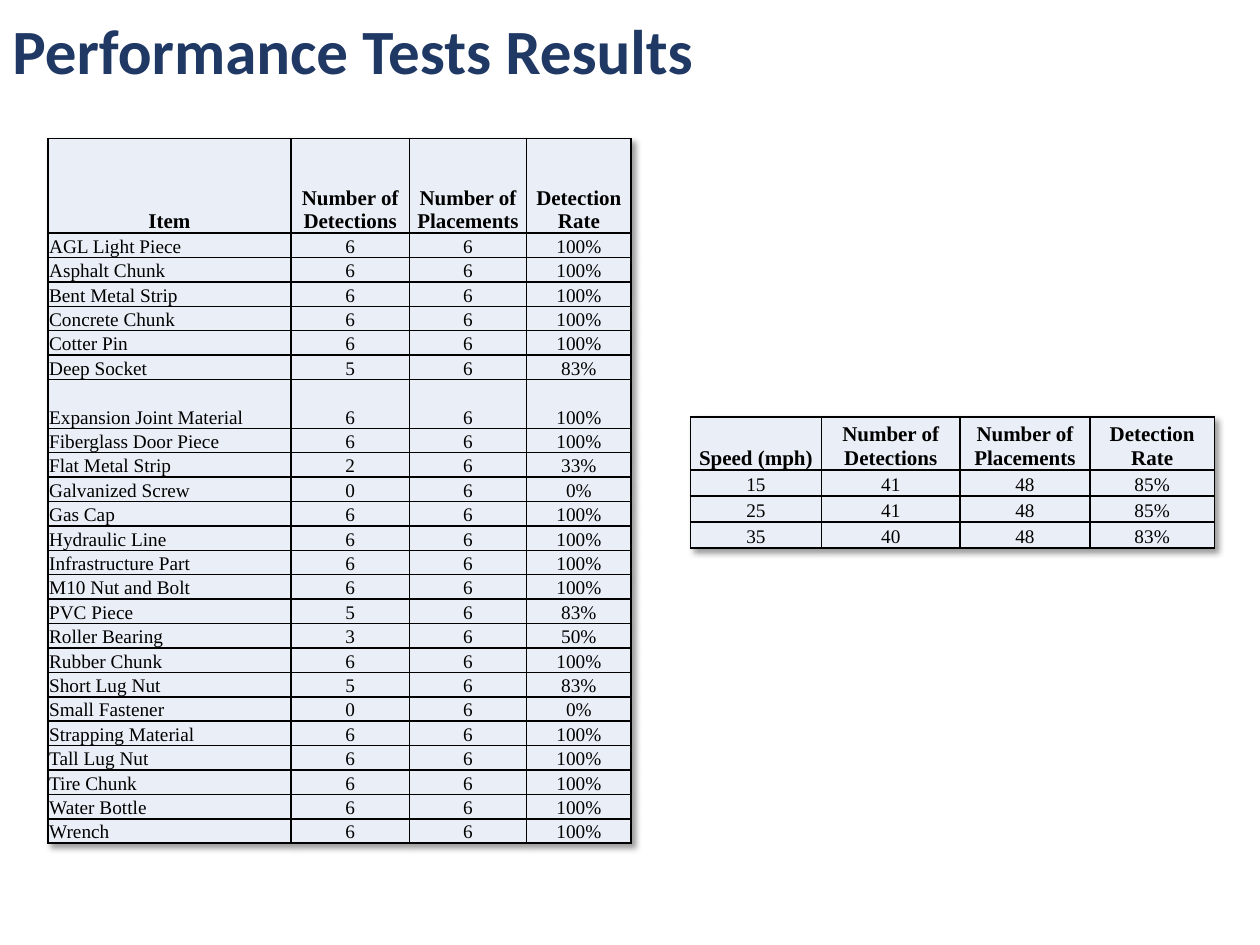
import dataclasses
import typing

import lxml.etree
import pptx
import pptx.dml.color
import pptx.enum.text
import pptx.oxml
import pptx.oxml.ns
import pptx.util

Inches = pptx.util.Inches
Align = pptx.enum.text.PP_ALIGN
Anchor = pptx.enum.text.MSO_ANCHOR


@dataclasses.dataclass(frozen=True)
class Theme:
    title_font: str = "Calibri"
    table_font: str = "Times New Roman"
    title_color: str = "203864"
    ink: str = "000000"
    cell_fill: str = "EAEFF7"
    title_size: int = 36
    header_size: int = 12
    body_size: int = 11
    border_width: int = 1


class Result(typing.NamedTuple):
    label: str
    detections: int
    placements: int
    height_units: int = 1

    def texts(self) -> list[str]:
        rate = f"{self.detections / self.placements:.0%}"
        return [self.label, str(self.detections), str(self.placements), rate]


@dataclasses.dataclass(frozen=True)
class ResultTable:
    label_heading: str
    left: float
    top: float
    height: float
    header_height: float
    column_widths: tuple[float, ...]
    label_align: Align
    results: list[Result]


THEME = Theme()
VALUE_HEADINGS = ["Number of Detections", "Number of Placements", "Detection Rate"]
ITEM_DETECTIONS = {
    "AGL Light Piece": 6,
    "Asphalt Chunk": 6,
    "Bent Metal Strip": 6,
    "Concrete Chunk": 6,
    "Cotter Pin": 6,
    "Deep Socket": 5,
    "Expansion Joint Material": 6,
    "Fiberglass Door Piece": 6,
    "Flat Metal Strip": 2,
    "Galvanized Screw": 0,
    "Gas Cap": 6,
    "Hydraulic Line": 6,
    "Infrastructure Part": 6,
    "M10 Nut and Bolt": 6,
    "PVC Piece": 5,
    "Roller Bearing": 3,
    "Rubber Chunk": 6,
    "Short Lug Nut": 5,
    "Small Fastener": 0,
    "Strapping Material": 6,
    "Tall Lug Nut": 6,
    "Tire Chunk": 6,
    "Water Bottle": 6,
    "Wrench": 6,
}
SPEED_DETECTIONS = {"15": 41, "25": 41, "35": 40}
DOUBLE_HEIGHT_ITEM = "Expansion Joint Material"

TABLES = [
    ResultTable(
        "Item", 0.38, 1.1, 5.59, 0.75, (1.93, 0.94, 0.93, 0.83), Align.LEFT,
        [Result(item, count, 6, 2 if item == DOUBLE_HEIGHT_ITEM else 1)
         for item, count in ITEM_DETECTIONS.items()],
    ),
    ResultTable(
        "Speed (mph)", 5.48, 3.31, 1.04, 0.42, (1.04, 1.1, 1.03, 0.99), Align.CENTER,
        [Result(speed, count, 48) for speed, count in SPEED_DETECTIONS.items()],
    ),
]


def apply_format(target: typing.Any, values: dict[str, typing.Any]) -> None:
    for name, value in values.items():
        setattr(target, name, value)


def write_text(para: typing.Any, text: str, font: str, size: int, color: str, bold: bool) -> None:
    span = para.add_run()
    span.text = text
    apply_format(span.font, {"name": font, "size": pptx.util.Pt(size), "bold": bold})
    span.font.color.rgb = pptx.dml.color.RGBColor.from_string(color)


def add_title(page: typing.Any, text: str) -> None:
    box = page.shapes.add_textbox(0, 0, Inches(7.7), Inches(0.86))
    apply_format(box.text_frame, {"word_wrap": True, "vertical_anchor": Anchor.MIDDLE})
    para = box.text_frame.paragraphs[0]
    para.line_spacing = 0.9
    write_text(para, text, THEME.title_font, THEME.title_size, THEME.title_color, True)


def add_borders(cell: typing.Any) -> None:
    properties = cell._tc.get_or_add_tcPr()
    width = pptx.util.Pt(THEME.border_width)
    for index, side in enumerate(("lnL", "lnR", "lnT", "lnB")):
        properties.insert(index, pptx.oxml.parse_xml(
            f'<a:{side} {pptx.oxml.ns.nsdecls("a")} w="{width}"><a:solidFill>'
            f'<a:srgbClr val="{THEME.ink}"/></a:solidFill></a:{side}>'))


def add_shadow(table: typing.Any) -> None:
    table._tbl.tblPr.insert(0, pptx.oxml.parse_xml(
        f'<a:effectLst {pptx.oxml.ns.nsdecls("a")}>'
        f'<a:outerShdw blurRad="{Inches(0.05)}" dist="{Inches(0.04)}" dir="2700000" '
        f'algn="tl" rotWithShape="0"><a:srgbClr val="{THEME.ink}">'
        '<a:alpha val="40000"/></a:srgbClr></a:outerShdw></a:effectLst>'))


def fill_cell(cell: typing.Any, text: str, align: Align, is_header: bool) -> None:
    inset = Inches(0.01)
    apply_format(cell, {
        "margin_left": inset, "margin_right": inset, "margin_top": inset,
        "margin_bottom": 0, "vertical_anchor": Anchor.BOTTOM,
    })
    cell.fill.solid()
    cell.fill.fore_color.rgb = pptx.dml.color.RGBColor.from_string(THEME.cell_fill)
    add_borders(cell)
    para = cell.text_frame.paragraphs[0]
    para.alignment = align
    size = THEME.header_size if is_header else THEME.body_size
    write_text(para, text, THEME.table_font, size, THEME.ink, is_header)


def add_result_table(page: typing.Any, content: ResultTable) -> None:
    rows = [[content.label_heading, *VALUE_HEADINGS]]
    rows += [result.texts() for result in content.results]
    frame = page.shapes.add_table(
        len(rows), len(content.column_widths), Inches(content.left), Inches(content.top),
        Inches(sum(content.column_widths)), Inches(content.height))
    table = frame.table
    apply_format(table, {"first_row": False, "horz_banding": False})
    add_shadow(table)

    for column, width in zip(table.columns, content.column_widths):
        column.width = Inches(width)
    units = [result.height_units for result in content.results]
    unit_height = (content.height - content.header_height) / sum(units)
    heights = [content.header_height, *(unit * unit_height for unit in units)]
    for row, height in zip(table.rows, heights):
        row.height = Inches(height)

    for row_index, texts in enumerate(rows):
        is_header = row_index == 0
        for column_index, text in enumerate(texts):
            is_label = column_index == 0 and not is_header
            align = content.label_align if is_label else Align.CENTER
            fill_cell(table.cell(row_index, column_index), text, align, is_header)


def main() -> None:
    deck = pptx.Presentation()
    apply_format(deck, {"slide_width": Inches(10), "slide_height": Inches(7.5)})
    page = deck.slides.add_slide(deck.slide_layouts[6])
    add_title(page, "Performance Tests Results")
    for content in TABLES:
        add_result_table(page, content)
    deck.save("out.pptx")


if __name__ == "__main__":
    main()
